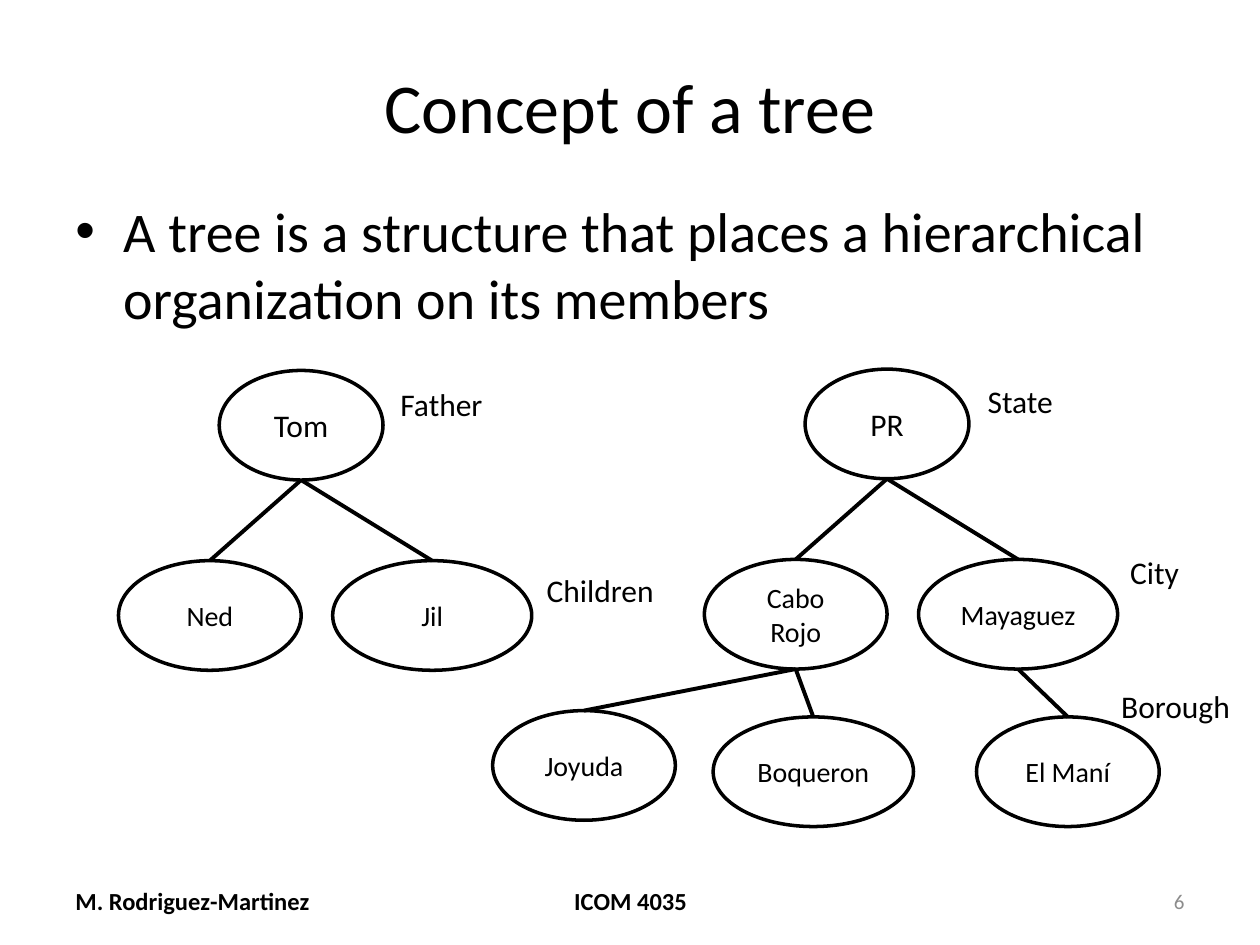
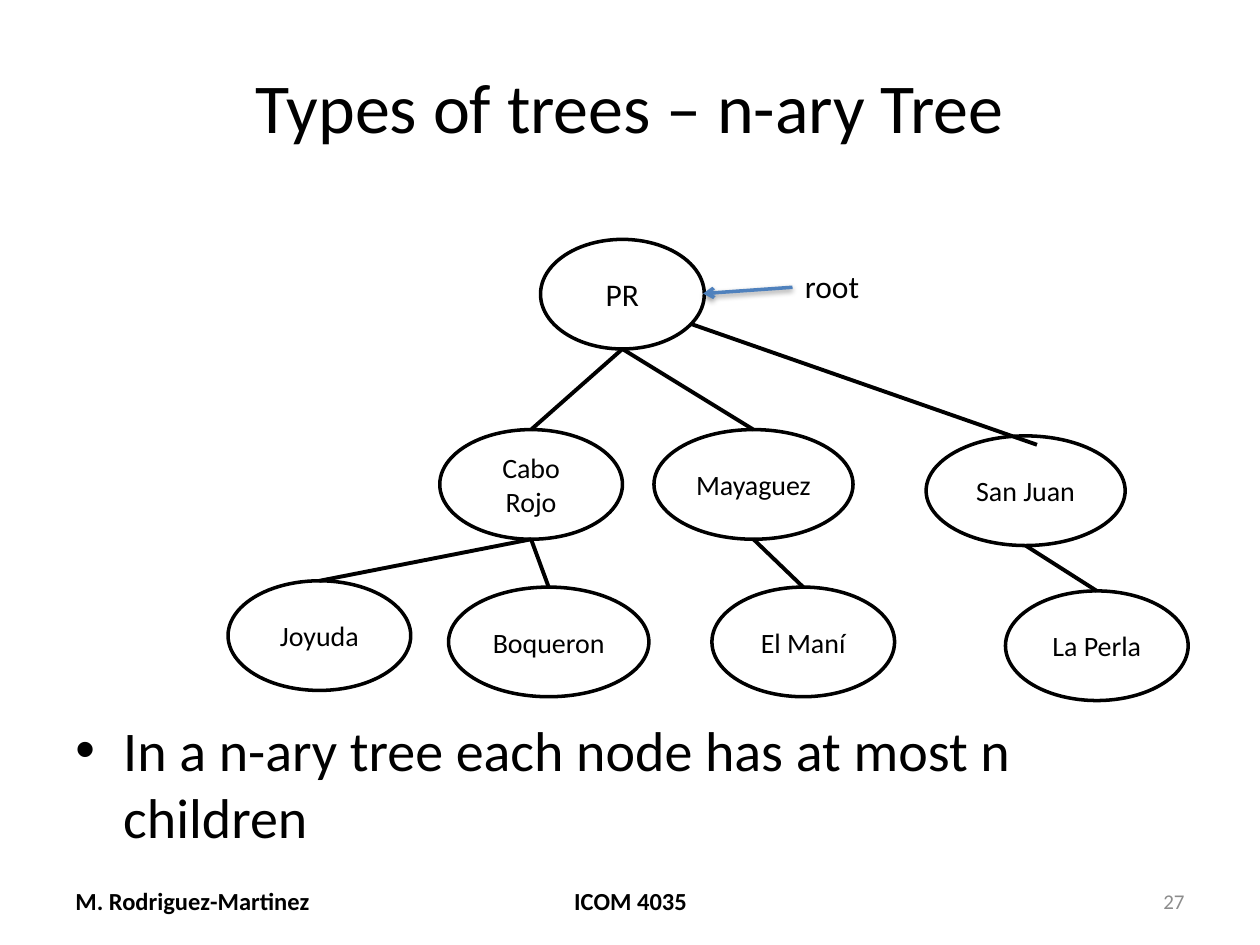
from dataclasses import dataclass
from typing import Optional

from lxml import etree
from pptx import Presentation
from pptx import util as u
from pptx.dml.color import RGBColor
from pptx.enum import shapes, text
from pptx.oxml import ns

BLACK = RGBColor(0x00, 0x00, 0x00)
WHITE = RGBColor(0xFF, 0xFF, 0xFF)
GRAY = RGBColor(0x8C, 0x8C, 0x8C)
BLUE = RGBColor(0x4F, 0x81, 0xBD)
FONT = "Calibri"
LEFT, CENTER, RIGHT = text.PP_ALIGN.LEFT, text.PP_ALIGN.CENTER, text.PP_ALIGN.RIGHT
MIDDLE, TOP = text.MSO_ANCHOR.MIDDLE, text.MSO_ANCHOR.TOP

NODE_HEIGHT = 0.87
MARGIN, CONTENT_WIDTH = 0.5, 9
FOOTER_TOP, FOOTER_HEIGHT = 6.95, 0.4
BULLET_INDENT = 0.38
ELLIPSE_TOP, ELLIPSE_BOTTOM = 0, 4


@dataclass(frozen=True)
class Node:
    name: str
    dx: float
    dy: float
    width: float = 1.45
    size: int = 16
    parent: Optional[str] = None


@dataclass(frozen=True)
class Label:
    words: str
    left: float
    top: float
    width: float


@dataclass(frozen=True)
class Footer:
    words: str
    left: float
    width: float
    align: text.PP_ALIGN
    size: int = 14
    bold: bool = True
    color: RGBColor = BLACK


FAMILY = [
    Node("Tom", 0, 0, 1.3, 18),
    Node("Ned", -0.8, 1.51, parent="Tom"),
    Node("Jil", 0.9, 1.51, 1.58, parent="Tom"),
]
PLACES = [
    Node("PR", 0, 0, 1.3, 18),
    Node("Cabo Rojo", -0.8, 1.51, parent="PR"),
    Node("Mayaguez", 0.9, 1.51, 1.58, parent="PR"),
    Node("Joyuda", -2.48, 2.71, parent="Cabo Rojo"),
    Node("Boqueron", -0.73, 2.76, 1.59, parent="Cabo Rojo"),
    Node("El Maní", 1.36, 2.76, parent="Mayaguez"),
]
SAN_JUAN = [
    Node("San Juan", 3.06, 1.56, 1.58),
    Node("La Perla", 3.69, 2.79, parent="San Juan"),
]
LEVEL_LABELS = [
    Label("State", 7.74, 2.98, 0.73),
    Label("City", 8.87, 4.34, 0.59),
    Label("Borough", 8.8, 5.4, 1.08),
    Label("Father", 3.08, 3.01, 0.87),
    Label("Children", 4.24, 4.48, 1.06),
]
FOOTERS = [
    Footer("M. Rodriguez-Martinez", MARGIN, 2.33, LEFT),
    Footer("ICOM 4035", 3.42, 3.17, CENTER),
]


def write(sp, words: str, size: float, align=LEFT, anchor=TOP, wrap=True,
          bold=False, color=BLACK):
    tf = sp.text_frame
    for name, value in {"word_wrap": wrap, "vertical_anchor": anchor}.items():
        setattr(tf, name, value)
    p = tf.paragraphs[0]
    p.alignment = align
    r = p.add_run()
    r.text = words
    for name, value in {"name": FONT, "size": u.Pt(size), "bold": bold}.items():
        setattr(r.font, name, value)
    r.font.color.rgb = color
    return p


def add_text(s, left: float, top: float, width: float, height: float,
             words: str, size: float, **style):
    sp = s.shapes.add_textbox(*map(u.Inches, (left, top, width, height)))
    return write(sp, words, size, **style)


def add_bullet(s, words: str, top: float, height: float) -> None:
    p = add_text(s, MARGIN, top, CONTENT_WIDTH, height, words, 32)
    pPr = p._p.get_or_add_pPr()
    indent = u.Inches(BULLET_INDENT)
    pPr.set("marL", str(indent))
    pPr.set("indent", str(-indent))
    etree.SubElement(pPr, ns.qn("a:buFont"), typeface="Arial")
    etree.SubElement(pPr, ns.qn("a:buChar"), char="•")


def add_labels(s, labels: list[Label]) -> None:
    for label in labels:
        add_text(s, label.left, label.top, label.width, 0.4, label.words, 18, wrap=False)


def add_line(s, start=(0, 0), end=(0, 0), color=BLACK, width=2.25):
    points = map(u.Inches, (*start, *end))
    sp = s.shapes.add_connector(shapes.MSO_CONNECTOR.STRAIGHT, *points)
    sp.line.color.rgb = color
    sp.line.width = u.Pt(width)
    etree.SubElement(sp._element.spPr, ns.qn("a:effectLst"))
    return sp


def add_edge(s, parent, child) -> None:
    sp = add_line(s)
    sp.begin_connect(parent, 2)
    sp.end_connect(child, ELLIPSE_TOP)
    sp._element.nvCxnSpPr.cNvCxnSpPr.stCxn.idx = ELLIPSE_BOTTOM


def add_pointer(s, start, end) -> None:
    sp = add_line(s, start, end, BLUE, 2)
    spPr = sp._element.spPr
    etree.SubElement(spPr.find(ns.qn("a:ln")), ns.qn("a:tailEnd"), type="arrow")
    shadow = etree.SubElement(
        spPr.find(ns.qn("a:effectLst")), ns.qn("a:outerShdw"),
        blurRad=str(u.Pt(3.1)), dist=str(u.Pt(1.6)), dir="5400000", rotWithShape="0")
    tint = etree.SubElement(shadow, ns.qn("a:srgbClr"), val=str(BLACK))
    etree.SubElement(tint, ns.qn("a:alpha"), val="38000")


def add_tree(s, nodes: list[Node], left: float, top: float) -> None:
    ovals = {}
    for node in nodes:
        box = (left + node.dx, top + node.dy, node.width, NODE_HEIGHT)
        sp = s.shapes.add_shape(shapes.MSO_SHAPE.OVAL, *map(u.Inches, box))
        sp.shadow.inherit = False
        sp.fill.solid()
        sp.fill.fore_color.rgb = WHITE
        sp.line.color.rgb = BLACK
        sp.line.width = u.Pt(2)
        write(sp, node.name, node.size, align=CENTER, anchor=MIDDLE)
        ovals[node.name] = sp
    for node in nodes:
        if node.parent:
            add_edge(s, ovals[node.parent], ovals[node.name])


def add_slide(prs, title: str, number: int):
    s = prs.slides.add_slide(prs.slide_layouts[5])
    sp = s.shapes.title
    box = {"left": MARGIN, "top": 0.3, "width": CONTENT_WIDTH, "height": 1.07}
    for name, value in box.items():
        setattr(sp, name, u.Inches(value))
    write(sp, title, 40, align=CENTER, anchor=MIDDLE)
    page = Footer(str(number), 7.17, 2.33, RIGHT, 12, False, GRAY)
    for footer in [*FOOTERS, page]:
        add_text(s, footer.left, FOOTER_TOP, footer.width, FOOTER_HEIGHT,
                 footer.words, footer.size, align=footer.align, anchor=MIDDLE,
                 bold=footer.bold, color=footer.color)
    return s


def build_concept(prs) -> None:
    s = add_slide(prs, "Concept of a tree", 6)
    add_bullet(s, "A tree is a structure that places a hierarchical "
                  "organization on its members", 1.51, 1.19)
    add_tree(s, FAMILY, 1.74, 2.94)
    add_tree(s, PLACES, 6.39, 2.93)
    add_labels(s, LEVEL_LABELS)


def build_nary(prs) -> None:
    s = add_slide(prs, "Types of trees – n-ary Tree", 27)
    add_bullet(s, "In a n-ary tree each node has at most n children", 5.63, 1.07)
    add_tree(s, PLACES + SAN_JUAN, 4.29, 1.9)
    add_line(s, (5.48, 2.57), (8.23, 3.53))
    add_labels(s, [Label("root", 6.29, 2.07, 0.64)])
    add_pointer(s, (6.29, 2.28), (5.58, 2.33))


def main() -> None:
    prs = Presentation()
    prs.slide_width, prs.slide_height = u.Inches(10), u.Inches(7.5)
    build_concept(prs)
    build_nary(prs)
    prs.save("out.pptx")


if __name__ == "__main__":
    main()
